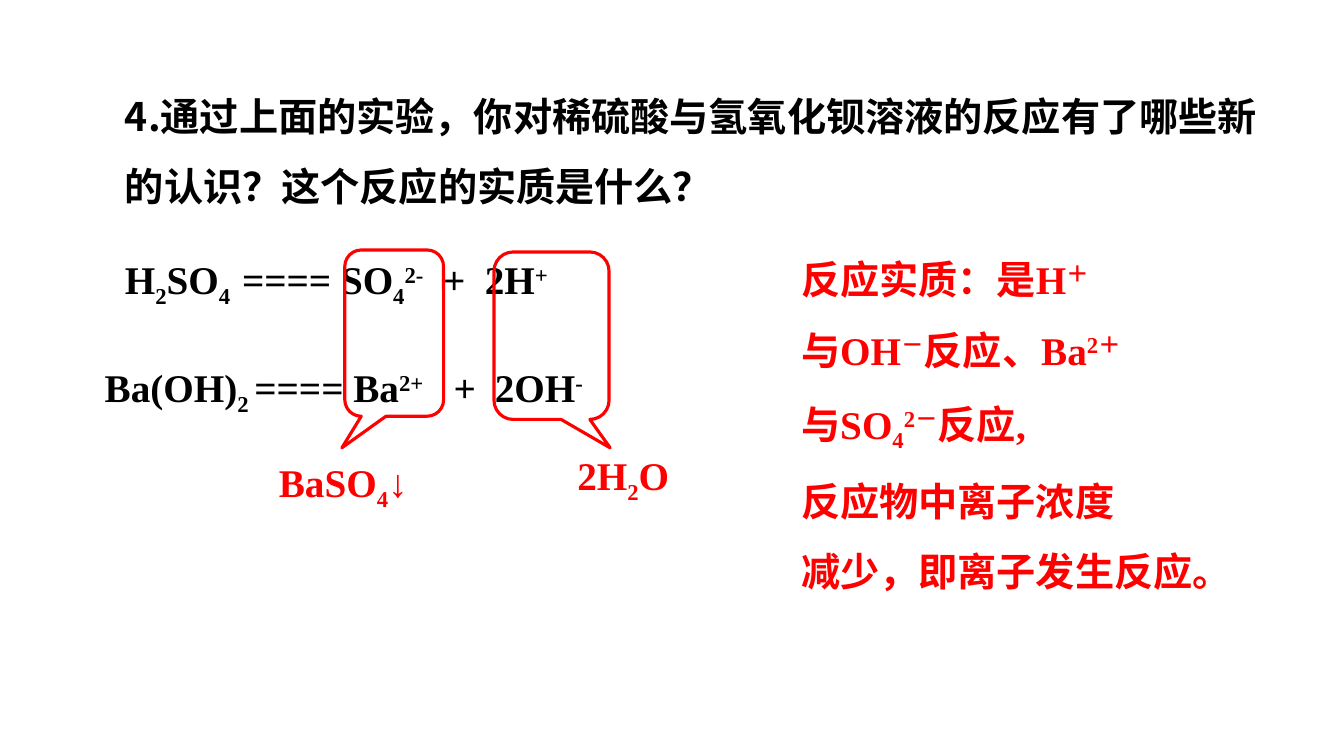
from dataclasses import dataclass
from typing import NamedTuple

from lxml import etree
from pptx import Presentation
from pptx import util as u
from pptx.dml.color import RGBColor
from pptx.enum import shapes, text
from pptx.oxml import ns


@dataclass(frozen=True)
class Theme:
    black: RGBColor = RGBColor(0, 0, 0)
    red: RGBColor = RGBColor(255, 0, 0)
    size: u.Pt = u.Pt(28)
    outline: u.Pt = u.Pt(2.25)
    latin: str = "Times New Roman"
    chinese: str = "Noto Sans CJK SC"


class Box(NamedTuple):
    left: float
    top: float
    width: float
    height: float

    def lengths(self) -> list[u.Cm]:
        return [u.Cm(value) for value in self]


class Run(NamedTuple):
    text: str
    baseline: int = 0


def sub(content: str) -> Run:
    return Run(content, -25)


def sup(content: str) -> Run:
    return Run(content, 30)


@dataclass(frozen=True)
class TextBlock:
    box: Box
    paragraphs: list[list[Run]]
    color: RGBColor
    latin: str = Theme.latin
    wrap: bool = True
    line_spacing: float = 1.0
    hanging: float = 0.0
    tabs: tuple[float, ...] = ()


@dataclass(frozen=True)
class Product:
    """A callout around the joining ions, with its product label."""
    callout: Box
    tip: tuple[float, float]
    label: TextBlock


THEME = Theme()

QUESTION = TextBlock(
    Box(2.9, 1.6, 29.06, 3.56),
    [[Run("4.通过上面的实验，你对稀硫酸与氢氧化钡溶液的反应有了哪些新的认识？这个反应的实质是什么？")]],
    THEME.black, latin=THEME.chinese, line_spacing=1.5)

EQUATIONS = [
    TextBlock(
        Box(2.9, 6.32, 19.48, 1.45),
        [[Run("H"), sub("2"), Run("SO"), sub("4"), Run("\t==== SO"), sub("4"),
          sup("2-"), Run("\t+\t2H"), sup("+")]],
        THEME.black, tabs=(2.95, 8.02, 9.07)),
    TextBlock(
        Box(2.39, 9.04, 15.21, 1.45),
        [[Run("Ba(OH)"), sub("2 "), Run("==== Ba"), sup("2+"),
          Run("\t+\t2OH"), sup("-")]],
        THEME.black, tabs=(8.79, 9.83)),
]

PRODUCTS = [
    Product(
        Box(8.69, 6.3, 2.49, 4.19), (-0.53, 0.69),
        TextBlock(Box(6.78, 11.43, 3.84, 1.45),
                  [[Run("BaSO"), sub("4"), Run("↓")]], THEME.red, wrap=False)),
    Product(
        Box(12.45, 6.35, 2.9, 4.22), (0.51, 0.67),
        TextBlock(Box(14.3, 11.25, 2.9, 1.45),
                  [[Run("2H"), sub("2"), Run("O")]], THEME.red, wrap=False)),
]

ANSWER = TextBlock(
    Box(19.94, 5.72, 10.46, 9.25),
    [
        [Run("反应实质：是H"), sup("＋")],
        [Run("与OH"), sup("－"), Run("反应、Ba"), sup("2＋")],
        [Run("与SO"), sub("4"), sup("2－"), Run("反应,")],
        [Run("反应物中离子浓度")],
        [Run("减少，即离子发生反应。")],
    ],
    THEME.red, line_spacing=1.5, hanging=0.97)


def format_paragraph(paragraph, block: TextBlock) -> None:
    properties = paragraph._p.get_or_add_pPr()
    if block.hanging:
        indent = u.Cm(block.hanging)
        properties.set("marL", str(indent))
        properties.set("indent", str(-indent))
    if block.tabs:
        tab_list = etree.SubElement(properties, ns.qn("a:tabLst"))
        for position in block.tabs:
            etree.SubElement(tab_list, ns.qn("a:tab"),
                             pos=str(u.Cm(position)), algn="l")
    paragraph.line_spacing = block.line_spacing


def add_run(paragraph, content: Run, block: TextBlock) -> None:
    run = paragraph.add_run()
    run.text = content.text
    run.font.size = THEME.size
    run.font.bold = True
    run.font.color.rgb = block.color
    run.font.name = block.latin
    properties = run._r.get_or_add_rPr()
    etree.SubElement(properties, ns.qn("a:ea"), typeface=THEME.chinese)
    if content.baseline:
        properties.set("baseline", str(content.baseline * 1000))


def add_text(container, block: TextBlock) -> None:
    frame = container.add_textbox(*block.box.lengths()).text_frame
    frame.word_wrap = block.wrap
    frame.auto_size = text.MSO_AUTO_SIZE.SHAPE_TO_FIT_TEXT
    for index, runs in enumerate(block.paragraphs):
        paragraph = frame.add_paragraph() if index else frame.paragraphs[0]
        format_paragraph(paragraph, block)
        for content in runs:
            add_run(paragraph, content, block)


def add_product(slide, product: Product) -> None:
    group = slide.shapes.add_group_shape()
    add_text(group.shapes, product.label)
    callout = group.shapes.add_shape(
        shapes.MSO_SHAPE.ROUNDED_RECTANGULAR_CALLOUT, *product.callout.lengths())
    callout.shadow.inherit = False
    callout.fill.background()
    callout.line.color.rgb = THEME.red
    callout.line.width = THEME.outline
    callout.adjustments[0], callout.adjustments[1] = product.tip


def main() -> None:
    presentation = Presentation()
    presentation.slide_width = u.Cm(33.87)
    presentation.slide_height = u.Cm(19.05)
    slide = presentation.slides.add_slide(presentation.slide_layouts[6])

    # Question and ionisation equations
    for block in (QUESTION, *EQUATIONS):
        add_text(slide.shapes, block)

    # Ions that join, and what they form
    for product in PRODUCTS:
        add_product(slide, product)

    # Essence of the reaction
    add_text(slide.shapes, ANSWER)

    presentation.save("out.pptx")


if __name__ == "__main__":
    main()
